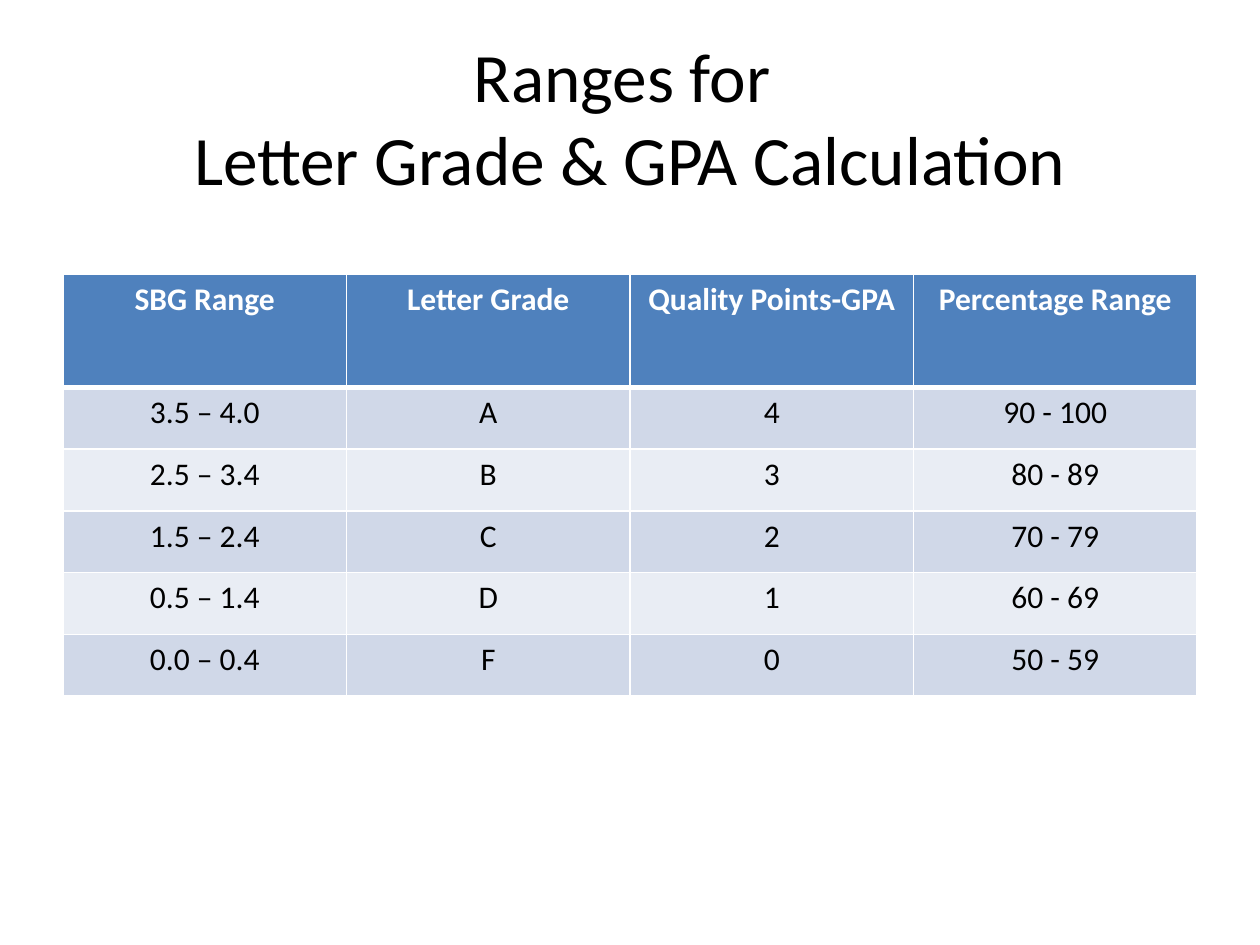
"""Build a slide with a table of grade ranges and GPA points."""
import pptx
import pptx.dml.color
import pptx.enum.text
import pptx.oxml
import pptx.oxml.ns
import pptx.util

RGB = pptx.dml.color.RGBColor
WHITE = RGB(0xFF, 0xFF, 0xFF)
BLACK = RGB(0x00, 0x00, 0x00)
BLUE = RGB(0x4F, 0x81, 0xBD)
BANDS = (RGB(0xE9, 0xED, 0xF4), RGB(0xD0, 0xD8, 0xE8))
FONT = "Calibri"
WIDE, HIGH = pptx.util.Inches(10), pptx.util.Inches(7.5)
EDGE = int(WIDE * 0.05)
SPAN = WIDE - 2 * EDGE
HEAD, ROW = pptx.util.Inches(0.9), pptx.util.Inches(0.49)

GRADES = (
    ("SBG Range", "Letter Grade", "Quality Points-GPA", "Percentage Range"),
    ("3.5 – 4.0", "A", "4", "90 - 100"),
    ("2.5 – 3.4", "B", "3", "80 - 89"),
    ("1.5 – 2.4", "C", "2", "70 - 79"),
    ("0.5 – 1.4", "D", "1", "60 - 69"),
    ("0.0 – 0.4", "F", "0", "50 - 59"),
)


def write(frame, text, size, color, bold=False):
    """Put centred text into a frame."""
    frame.text = text
    for para in frame.paragraphs:
        para.alignment = pptx.enum.text.PP_ALIGN.CENTER
        for run in para.runs:
            font = run.font
            font.name, font.size, font.bold = FONT, pptx.util.Pt(size), bold
            font.color.rgb = color


def border(cell, **widths):
    """Draw white cell borders, with widths in points keyed by side."""
    props = cell._tc.get_or_add_tcPr()
    for side, width in widths.items():
        props.append(pptx.oxml.parse_xml(
            f'<a:ln{side} {pptx.oxml.ns.nsdecls("a")} w="{pptx.util.Pt(width)}">'
            f'<a:solidFill><a:srgbClr val="{WHITE}"/></a:solidFill></a:ln{side}>'))


def add_title(slide, text):
    """Add the slide title."""
    box = slide.shapes.add_textbox(EDGE, int(HIGH * 0.04), SPAN, int(HIGH / 6))
    frame = box.text_frame
    frame.word_wrap = True
    frame.vertical_anchor = pptx.enum.text.MSO_ANCHOR.MIDDLE
    write(frame, text, 39.6, BLACK)


def add_grid(slide, data):
    """Add a banded table whose first row is the header."""
    rows, cols = len(data), len(data[0])
    table = slide.shapes.add_table(
        rows, cols, EDGE, int(HIGH * 0.29), SPAN, HEAD + ROW * (rows - 1)).table
    for r, line in enumerate(data):
        top = r == 0
        table.rows[r].height = HEAD if top else ROW
        for c, text in enumerate(line):
            cell = table.cell(r, c)
            write(cell.text_frame, text, 18, WHITE if top else BLACK, top)
            border(cell, L=1, R=1, T=3 if r == 1 else 1, B=3 if top else 1)
            cell.fill.solid()
            cell.fill.fore_color.rgb = BLUE if top else BANDS[r % 2]


def main():
    """Build and save the slide."""
    deck = pptx.Presentation()
    deck.slide_width, deck.slide_height = WIDE, HIGH
    slide = deck.slides.add_slide(deck.slide_layouts[6])
    add_title(slide, "Ranges for \vLetter Grade & GPA Calculation")
    add_grid(slide, GRADES)
    deck.save("out.pptx")


if __name__ == "__main__":
    main()
